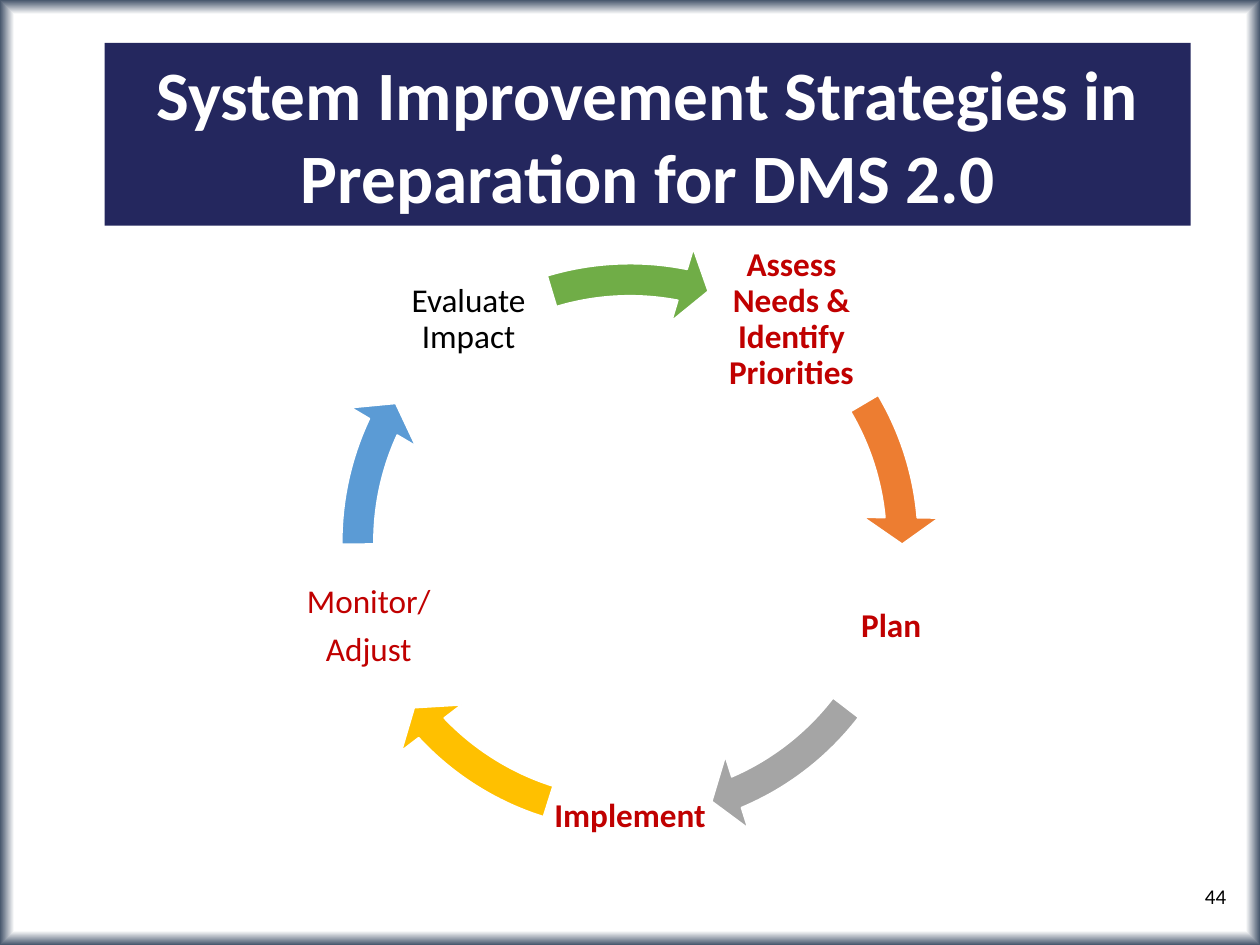
"""Build a slide with a five-step improvement cycle."""
import math

from pptx import Presentation
from pptx import util as u
from pptx.dml.color import RGBColor
from pptx.enum import shapes, text
from pptx.oxml import parse_xml
from pptx.oxml.ns import nsdecls

TITLE = "System Improvement Strategies in Preparation for DMS 2.0"
PAGE = "44"
FONT = "Calibri"
RED, BLACK, WHITE, NAVY, SLATE = "C00000", "000000", "FFFFFF", "24275E", "44546A"
# label, label colour, bold, arrow colour, arrow start and end in degrees, arrow drop
STEPS = [
    ("Assess Needs & Identify Priorities", RED, True, "ED7D31", 329.42, 354.9, 0),
    ("Plan", RED, True, "A5A5A5", 37.54, 66.93, 0),
    ("Implement", RED, True, "FFC000", 107.48, 136.86, 0),
    ("Monitor/\nAdjust", RED, False, "5B9BD5", 179.5, 204.98, 0),
    ("Evaluate Impact", BLACK, False, "70AD47", 253.3, 281.11, 0.08),
]
CX, CY, RADIUS = 5, 4.3, 2.18
LABEL, RING = 1.31, 4.92
THICKNESS, HEAD_ANGLE, HEAD_WIDTH = 0.052, 5.6, 0.061
DEGREE = 0.6


def rgb(value):
    """Return the colour for a hex string."""
    return RGBColor.from_string(value)


def box(left, top, width, height):
    """Return a position and size in inches."""
    return [u.Inches(v) for v in (left, top, width, height)]


def square(cx, cy, size):
    """Return the box of a square around a centre."""
    return box(cx - size / 2, cy - size / 2, size, size)


def write(sp, content, size, color, align, bold=False):
    """Fill a shape with formatted text and return its frame."""
    tf = sp.text_frame
    tf.word_wrap = True
    tf.auto_size = text.MSO_AUTO_SIZE.NONE
    tf.text = content
    for p in tf.paragraphs:
        p.alignment = align
        for r in p.runs:
            r.font.name, r.font.size, r.font.bold = FONT, u.Pt(size), bold
            r.font.color.rgb = rgb(color)
    return tf


def set_background(s):
    """Give the slide a white background that darkens at its edges."""
    stops = "".join(
        f'<a:gs pos="{pos}"><a:srgbClr val="{color}"/></a:gs>'
        for pos, color in ((97000, WHITE), (100000, SLATE)))
    s.element.cSld.insert(0, parse_xml(
        f'<p:bg {nsdecls("p", "a")}><p:bgPr><a:gradFill><a:gsLst>{stops}</a:gsLst>'
        '<a:path path="shape"><a:fillToRect l="50000" t="50000" r="50000" b="50000"/>'
        '</a:path></a:gradFill><a:effectLst/></p:bgPr></p:bg>'))


def add_label(s, angle, content, color, bold):
    """Place a step label on the cycle."""
    x = CX + RADIUS * math.cos(math.radians(angle))
    y = CY + RADIUS * math.sin(math.radians(angle))
    sp = s.shapes.add_textbox(*square(x, y, LABEL))
    tf = write(sp, content, 19, color, text.PP_ALIGN.CENTER, bold)
    tf.vertical_anchor = text.MSO_ANCHOR.MIDDLE
    tf.margin_left = tf.margin_right = tf.margin_top = tf.margin_bottom = u.Inches(0.03)
    for p in tf.paragraphs:
        p.line_spacing, p.space_after = 0.9, u.Pt(6.65)


def add_arrow(s, color, start, end, drop):
    """Draw one arc arrow of the cycle."""
    sp = s.shapes.add_shape(shapes.MSO_SHAPE.CIRCULAR_ARROW, *square(CX, CY + drop, RING))
    values = (THICKNESS, HEAD_ANGLE * DEGREE, end * DEGREE, start * DEGREE, HEAD_WIDTH)
    for i, value in enumerate(values):
        sp.adjustments[i] = value
    sp.shadow.inherit = False
    sp.fill.solid()
    sp.fill.fore_color.rgb = rgb(color)
    sp.line.color.rgb = rgb(WHITE)
    sp.line.width = u.Pt(1)


def main():
    """Build and save the slide."""
    prs = Presentation()
    prs.slide_width, prs.slide_height = u.Inches(10), u.Inches(7.5)
    s = prs.slides.add_slide(prs.slide_layouts[5])
    set_background(s)

    title = s.shapes.title
    title.left, title.top, title.width, title.height = box(0.83, 0.34, 8.62, 1.45)
    title.fill.solid()
    title.fill.fore_color.rgb = rgb(NAVY)
    tf = write(title, TITLE, 39.6, WHITE, text.PP_ALIGN.CENTER, True)
    tf.vertical_anchor = text.MSO_ANCHOR.MIDDLE

    for i, (label, color, bold, fill, start, end, drop) in enumerate(STEPS):
        add_label(s, -54 + i * 360 / len(STEPS), label, color, bold)
        add_arrow(s, fill, start, end, drop)

    page = s.shapes.add_textbox(*box(7.58, 6.96, 2.25, 0.4))
    tf = write(page, PAGE, 12, BLACK, text.PP_ALIGN.RIGHT)
    tf.vertical_anchor = text.MSO_ANCHOR.TOP
    prs.save("out.pptx")


if __name__ == "__main__":
    main()
